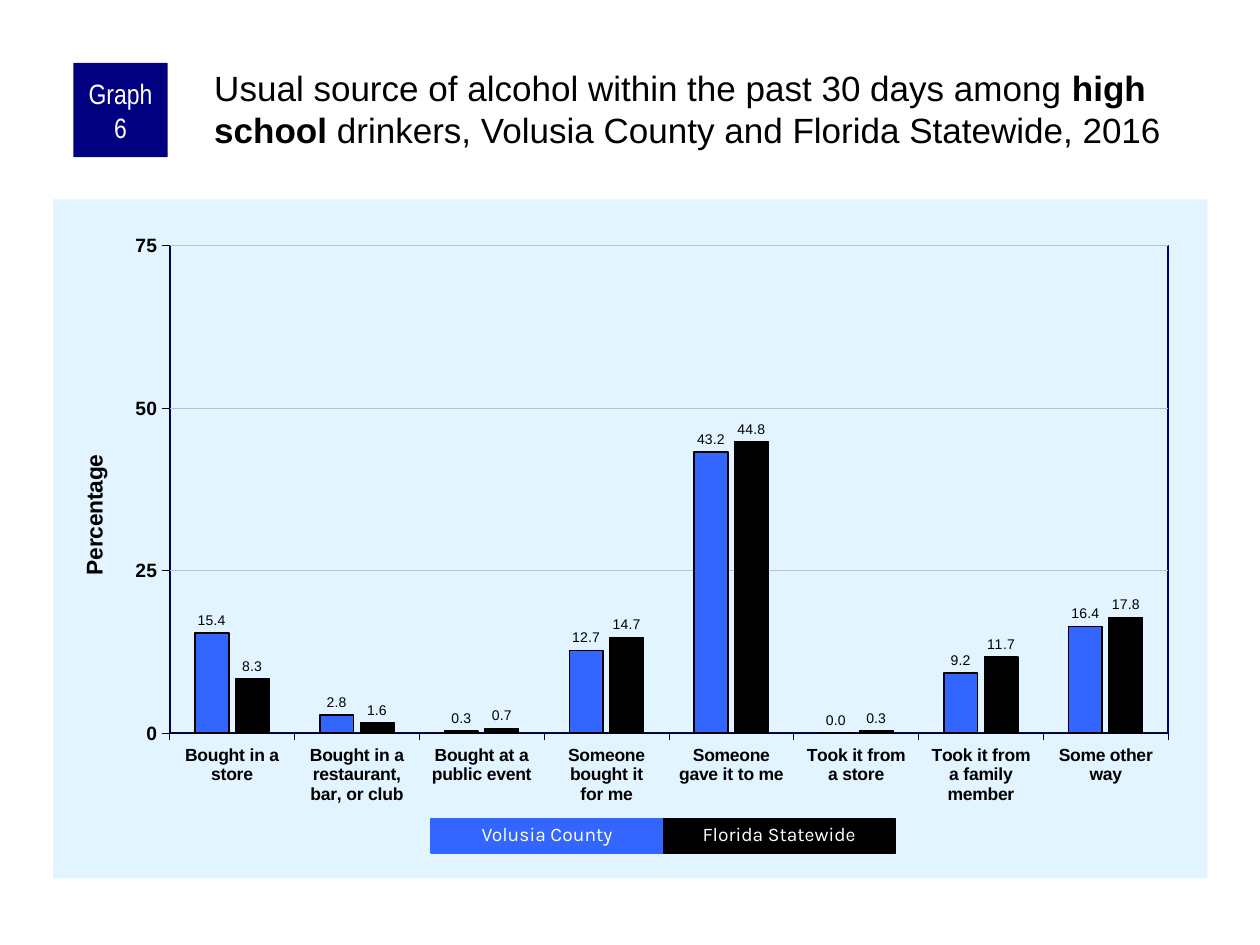
"""Build the slide on usual sources of alcohol among high school drinkers."""
from dataclasses import dataclass

from lxml.etree import SubElement
from pptx import Presentation
from pptx.chart.data import CategoryChartData
from pptx.dml.color import RGBColor
from pptx.enum.chart import XL_CHART_TYPE, XL_LABEL_POSITION, XL_TICK_MARK
from pptx.enum.shapes import MSO_SHAPE
from pptx.enum.text import MSO_ANCHOR, MSO_AUTO_SIZE, PP_ALIGN
from pptx.oxml import parse_xml
from pptx.oxml.ns import nsdecls, qn
from pptx.util import Cm, Pt


@dataclass(frozen=True)
class Theme:
    navy: str = "000080"
    blue: str = "3366FF"
    black: str = "000000"
    white: str = "FFFFFF"
    panel: str = "E1F4FF"
    grid: str = "C0C0C0"
    body_font: str = "Arial"
    badge_font: str = "Arial Narrow"
    legend_font: str = "Karla"
    title_size: float = 20
    badge_size: float = 16
    legend_size: float = 11
    chart_size: float = 11.5
    axis_title_size: float = 13
    value_size: float = 11
    category_size: float = 10
    label_size: float = 8


THEME = Theme()
CATEGORIES = [
    "Bought in a store",
    "Bought in a restaurant, bar, or club",
    "Bought at a public event",
    "Someone bought it\nfor me",
    "Someone\ngave it to me",
    "Took it from\na store",
    "Took it from\na family member",
    "Some other way",
]
SERIES = [
    ("Volusia County", THEME.blue, 1, [15.4, 2.8, 0.3, 12.7, 43.2, 0, 9.2, 16.4]),
    ("Florida Statewide", THEME.black, 0.75, [8.3, 1.6, 0.7, 14.7, 44.8, 0.3, 11.7, 17.8]),
]


def set_font(font, name, size, color, bold=False):
    font.name = name
    font.size = Pt(size)
    font.bold = bold
    font.color.rgb = RGBColor.from_string(color)


def set_fill(fill, color):
    fill.solid()
    fill.fore_color.rgb = RGBColor.from_string(color)


def set_line(line, color, width):
    set_fill(line.fill, color)
    line.width = Pt(width)


def add_run(para, text, name, size, color, bold=False):
    span = para.add_run()
    span.text = text
    set_font(span.font, name, size, color, bold)


def set_margins(frame, left, top, right, bottom):
    frame.margin_left, frame.margin_top = Cm(left), Cm(top)
    frame.margin_right, frame.margin_bottom = Cm(right), Cm(bottom)


def add_block(page, left, top, width, height, color, text, name, size):
    box = page.shapes.add_shape(
        MSO_SHAPE.RECTANGLE, Cm(left), Cm(top), Cm(width), Cm(height))
    box.shadow.inherit = False
    set_fill(box.fill, color)
    box.line.fill.background()
    para = box.text_frame.paragraphs[0]
    para.alignment = PP_ALIGN.CENTER
    add_run(para, text, name, size, THEME.white)
    return box


def add_badge(page):
    box = add_block(page, 1.48, 1.27, 1.9, 1.9, THEME.navy, "Graph 6",
                    THEME.badge_font, THEME.badge_size)
    box.text_frame.word_wrap = True
    box.text_frame.vertical_anchor = MSO_ANCHOR.MIDDLE
    set_margins(box.text_frame, 0.13, 0, 0.13, 0)


def add_title(page):
    box = page.shapes.add_textbox(Cm(4.24), Cm(1.27), Cm(20.12), Cm(2.12))
    frame = box.text_frame
    frame.word_wrap = True
    set_margins(frame, 0.08, 0.08, 0, 0)
    for text, bold in (
        ("Usual source of alcohol within the past 30 days among ", False),
        ("high school", True),
        (" drinkers, Volusia County and Florida Statewide, 2016", False),
    ):
        add_run(frame.paragraphs[0], text, THEME.body_font, THEME.title_size,
                THEME.black, bold)


def add_legend(page):
    width = 4.68
    for index, (name, color, *_) in enumerate(SERIES):
        box = add_block(page, 8.69 + index * width, 16.51, width, 0.69, color,
                        name, THEME.legend_font, THEME.legend_size)
        set_line(box.line, color, 0.75)
        frame = box.text_frame
        frame.word_wrap = True
        frame.vertical_anchor = MSO_ANCHOR.TOP
        frame.auto_size = MSO_AUTO_SIZE.SHAPE_TO_FIT_TEXT
        frame.paragraphs[0].line_spacing = 0.9


def place(element, index, **settings):
    for old in element.findall(qn("c:layout")):
        element.remove(old)
    layout = parse_xml(f"<c:layout {nsdecls('c')}><c:manualLayout/></c:layout>")
    for key, value in settings.items():
        SubElement(layout[0], qn(f"c:{key}")).set("val", str(value))
    element.insert(index, layout)


def style_axis(axis, size):
    axis.major_tick_mark = XL_TICK_MARK.OUTSIDE
    axis.minor_tick_mark = XL_TICK_MARK.NONE
    set_font(axis.tick_labels.font, THEME.body_font, size, THEME.black, True)
    set_line(axis.format.line, THEME.black, 0.25)


def style_value_axis(axis):
    style_axis(axis, THEME.value_size)
    axis.minimum_scale, axis.maximum_scale, axis.major_unit = 0, 75, 25
    axis.tick_labels.number_format = "0"
    axis.tick_labels.number_format_is_linked = False
    set_line(axis.major_gridlines.format.line, THEME.grid, 0.25)
    title = axis.axis_title
    add_run(title.text_frame.paragraphs[0], "Percentage", THEME.body_font,
            THEME.axis_title_size, THEME.black, True)
    element = title._element
    body = element.find(".//" + qn("a:bodyPr"))
    body.set("rot", "-5400000")
    body.set("vert", "horz")
    place(element, 1, xMode="edge", yMode="edge", x=0.02, y=0.37)


def style_series(series, color, width):
    set_fill(series.format.fill, color)
    set_line(series.format.line, THEME.black, width)
    series.invert_if_negative = False
    labels = series.data_labels
    labels.show_value = True
    labels.position = XL_LABEL_POSITION.OUTSIDE_END
    labels.number_format = "0.0"
    labels.number_format_is_linked = False
    set_font(labels.font, THEME.body_font, THEME.label_size, THEME.black)


def style_areas(chart):
    space = chart._chartSpace
    panel = parse_xml(
        f'<c:spPr {nsdecls("c", "a")}><a:solidFill><a:srgbClr val="{THEME.panel}"/>'
        "</a:solidFill><a:ln><a:noFill/></a:ln></c:spPr>")
    space.find(qn("c:chart")).addnext(panel)
    plot_area = space.find(".//" + qn("c:plotArea"))
    place(plot_area, 0, layoutTarget="inner", xMode="edge", yMode="edge",
          x=0.101, y=0.068, w=0.865, h=0.718)
    plot_area.append(parse_xml(
        f'<c:spPr {nsdecls("c", "a")}><a:noFill/><a:ln w="{Pt(1)}"><a:solidFill>'
        f'<a:srgbClr val="{THEME.navy}"/></a:solidFill></a:ln></c:spPr>'))


def add_source_chart(page):
    data = CategoryChartData(number_format="0.0")
    data.categories = CATEGORIES
    for name, _, _, values in SERIES:
        data.add_series(name, values)
    chart = page.shapes.add_chart(
        XL_CHART_TYPE.COLUMN_CLUSTERED, Cm(1.07), Cm(4.02), Cm(23.27), Cm(13.69), data).chart
    chart.has_title = chart.has_legend = False
    set_font(chart.font, THEME.body_font, THEME.chart_size, THEME.black)
    plot = chart.plots[0]
    plot.gap_width, plot.overlap, plot.vary_by_categories = 150, -20, False
    for series, (_, color, width, _) in zip(plot.series, SERIES):
        style_series(series, color, width)
    style_axis(chart.category_axis, THEME.category_size)
    style_value_axis(chart.value_axis)
    style_areas(chart)


def main():
    deck = Presentation()
    deck.slide_width, deck.slide_height = Cm(25.4), Cm(19.05)
    page = deck.slides.add_slide(deck.slide_layouts[6])
    add_source_chart(page)
    add_badge(page)
    add_title(page)
    add_legend(page)
    deck.save("out.pptx")


if __name__ == "__main__":
    main()
